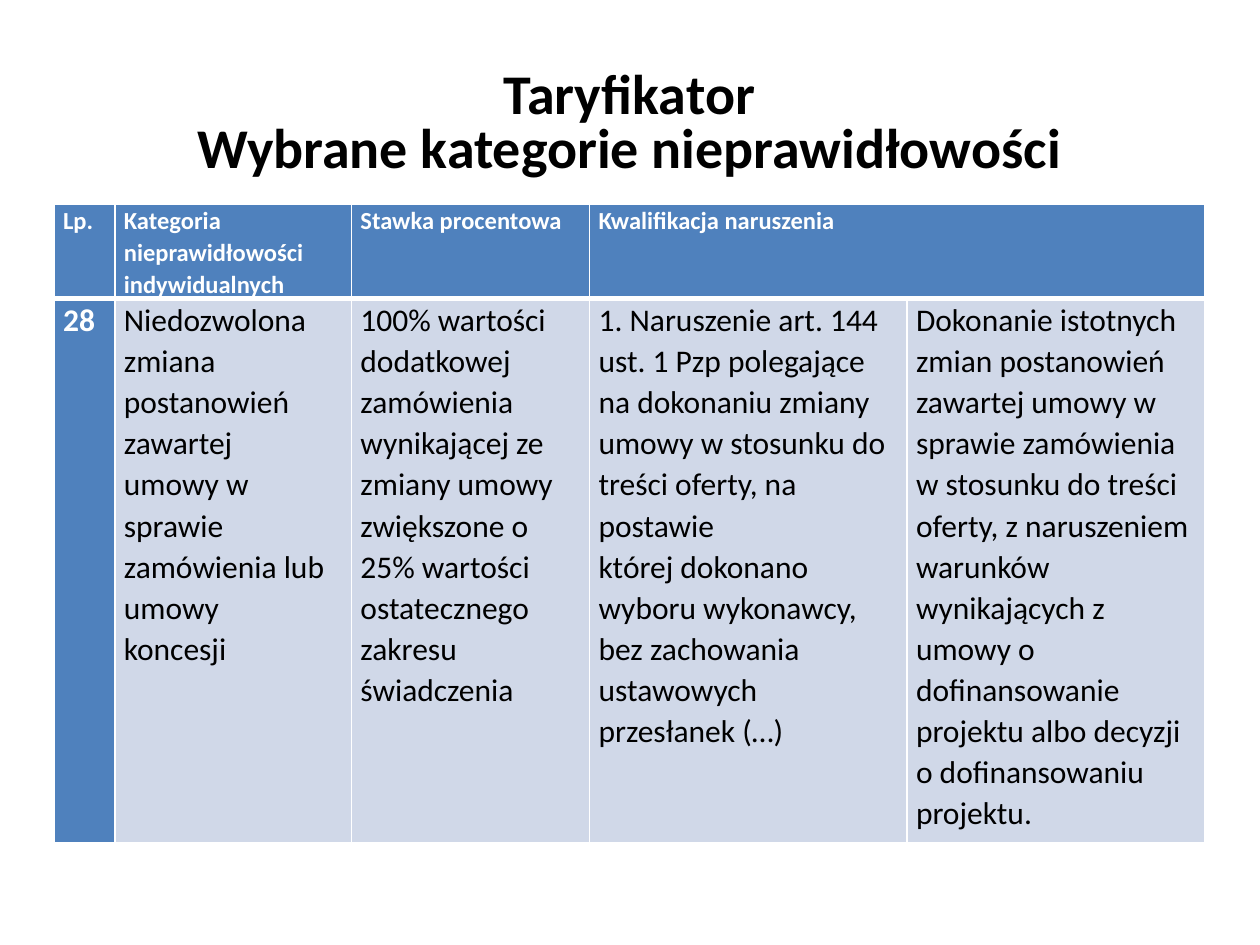
from dataclasses import dataclass

from lxml import etree
from pptx import Presentation
from pptx.dml.color import RGBColor
from pptx.enum.text import PP_ALIGN
from pptx.oxml.ns import qn
from pptx.util import Pt

CENTER = PP_ALIGN.CENTER


@dataclass(frozen=True)
class Theme:
    font: str = "Calibri"
    black: str = "000000"
    white: str = "FFFFFF"
    accent: str = "4F81BD"
    pale: str = "D0D8E8"
    title_size: float = 32
    header_size: float = 14
    body_size: float = 18
    title_spacing: float = 0.8
    cell_spacing: float = 1.07


@dataclass(frozen=True)
class CellStyle:
    size: float
    color: str
    fill: str
    bold: bool
    bottom: float = 1  # bottom border width


THEME = Theme()
HEADER = CellStyle(THEME.header_size, THEME.white, THEME.accent, True, bottom=3)
NUMBER = CellStyle(THEME.body_size, THEME.white, THEME.accent, True)
BODY = CellStyle(THEME.body_size, THEME.black, THEME.pale, False)

LEFT, WIDTH = 31, 657.5
TITLE_TOP, TITLE_HEIGHT = 37.5, 240
TABLE_TOP = 116.8
COLUMNS = (34.7, 135.2, 136.1, 181.4, 170.1)
ROWS = (45.4, 311)
CELL_INSET = 5.1

TITLE = ("Taryfikator", "Wybrane kategorie nieprawidłowości")
HEADINGS = (
    "Lp.",
    "Kategoria nieprawidłowości indywidualnych",
    "Stawka procentowa",
    "Kwalifikacja naruszenia",
    "",
)
ENTRY = (
    "28",
    "Niedozwolona zmiana\npostanowień zawartej\numowy w sprawie\n"
    "zamówienia lub umowy\nkoncesji",
    "100% wartości\ndodatkowej zamówienia wynikającej ze\nzmiany umowy\n"
    "zwiększone o 25% wartości ostatecznego\nzakresu świadczenia",
    "1. Naruszenie art. 144 ust. 1 Pzp polegające na dokonaniu zmiany umowy "
    "w stosunku do treści oferty, na postawie\n"
    "której dokonano wyboru wykonawcy, bez zachowania ustawowych przesłanek (…)",
    "Dokonanie istotnych zmian postanowień zawartej umowy w sprawie zamówienia "
    "w stosunku do treści oferty, z naruszeniem warunków wynikających z umowy "
    "o dofinansowanie projektu albo decyzji o dofinansowaniu projektu.",
)


def style_paragraph(p, size: float, color: str, bold: bool, spacing: float) -> None:
    p.line_spacing = spacing
    p.font.name = THEME.font
    p.font.size = Pt(size)
    p.font.bold = bold
    p.font.color.rgb = RGBColor.from_string(color)


def add_border(cell, side: str, width: float) -> None:
    props = cell._tc.get_or_add_tcPr()
    ln = etree.SubElement(props, qn(f"a:ln{side}"), w=str(Pt(width)))
    fill = etree.SubElement(ln, qn("a:solidFill"))
    etree.SubElement(fill, qn("a:srgbClr"), val=THEME.white)


def draw_cell(cell, text: str, style: CellStyle, top: float) -> None:
    cell.margin_left = cell.margin_right = Pt(CELL_INSET)
    cell.margin_top = cell.margin_bottom = 0
    cell.text = text
    for p in cell.text_frame.paragraphs:
        style_paragraph(p, style.size, style.color, style.bold, THEME.cell_spacing)
    # Borders come before the fill in the cell properties
    for side, width in (("L", 1), ("R", 1), ("T", top), ("B", style.bottom)):
        add_border(cell, side, width)
    cell.fill.solid()
    cell.fill.fore_color.rgb = RGBColor.from_string(style.fill)


def add_title(s) -> None:
    box = s.shapes.add_textbox(Pt(LEFT), Pt(TITLE_TOP), Pt(WIDTH), Pt(TITLE_HEIGHT))
    tf = box.text_frame
    tf.word_wrap = True
    tf.text = "\n".join(TITLE)
    for p in tf.paragraphs:
        p.alignment = CENTER
        style_paragraph(p, THEME.title_size, THEME.black, True, THEME.title_spacing)


def add_tariff_table(s) -> None:
    frame = s.shapes.add_table(
        len(ROWS), len(COLUMNS), Pt(LEFT), Pt(TABLE_TOP), Pt(WIDTH), Pt(sum(ROWS))
    )
    table = frame.table
    for column, width in zip(table.columns, COLUMNS):
        column.width = Pt(width)
    for row, height in zip(table.rows, ROWS):
        row.height = Pt(height)
    for i, text in enumerate(HEADINGS):
        draw_cell(table.cell(0, i), text, HEADER, top=1)
    for i, text in enumerate(ENTRY):
        draw_cell(table.cell(1, i), text, BODY if i else NUMBER, top=HEADER.bottom)
    # The last heading covers two columns
    table.cell(0, 3).merge(table.cell(0, 4))


def main() -> None:
    prs = Presentation()
    prs.slide_width, prs.slide_height = Pt(720), Pt(540)
    s = prs.slides.add_slide(prs.slide_layouts[6])
    add_title(s)
    add_tariff_table(s)
    prs.save("out.pptx")


if __name__ == "__main__":
    main()
